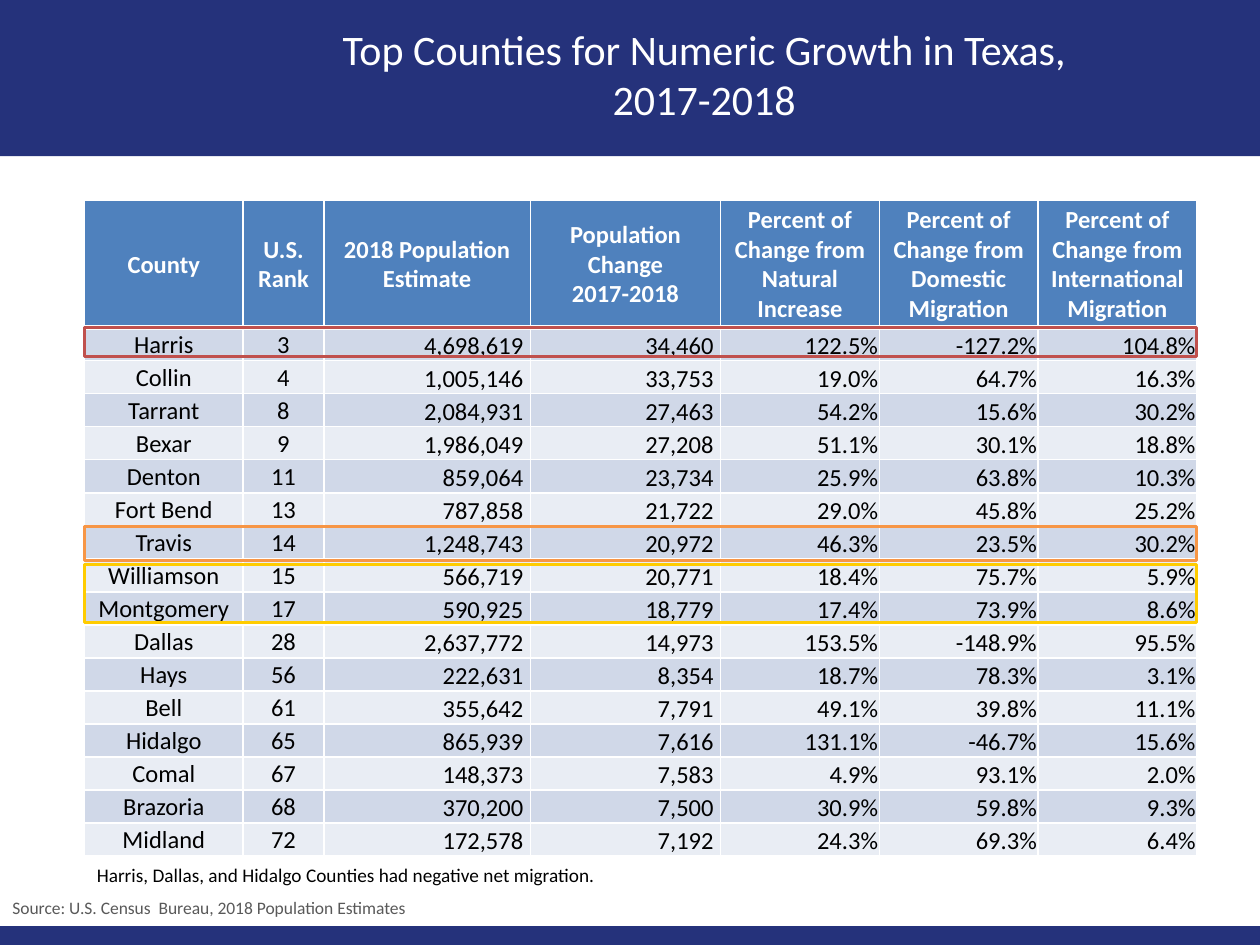
from lxml import etree
from pptx import Presentation
from pptx.dml.color import RGBColor
from pptx.enum.shapes import MSO_SHAPE
from pptx.enum.text import MSO_ANCHOR, PP_ALIGN
from pptx.oxml.ns import qn
from pptx.util import Pt

RECT = MSO_SHAPE.RECTANGLE
MID, LOW, TOP = MSO_ANCHOR.MIDDLE, MSO_ANCHOR.BOTTOM, MSO_ANCHOR.TOP
LEFT, MAIN, RIGHT = PP_ALIGN.LEFT, PP_ALIGN.CENTER, PP_ALIGN.RIGHT
FONT = "Calibri"
HUES = {
    "navy": "25327B", "head": "4F81BD", "odd": "D0D8E8", "even": "E9EDF4",
    "white": "FFFFFF", "black": "000000", "gray": "595959",
    "orange": "F79646", "red": "C0504D", "gold": "FFCC00",
}
WIDE, HIGH = 720, 540
COLS = [90.72, 46.08, 118.08, 108.72, 90.72, 90.72, 90.72]
HEAD_H, ROW_H = 72.72, 18.9
GRID = (48.24, 114.48, sum(COLS), 489.6 - 114.48)
HEADS = [
    "County", "U.S. Rank", "2018 Population Estimate",
    "Population Change\n2017-2018",
    "Percent of Change from Natural Increase",
    "Percent of Change from Domestic Migration",
    "Percent of Change from International Migration",
]
ROWS = [
    ("Harris", "3", "4,698,619", "34,460", "122.5%", "-127.2%", "104.8%"),
    ("Collin", "4", "1,005,146", "33,753", "19.0%", "64.7%", "16.3%"),
    ("Tarrant", "8", "2,084,931", "27,463", "54.2%", "15.6%", "30.2%"),
    ("Bexar", "9", "1,986,049", "27,208", "51.1%", "30.1%", "18.8%"),
    ("Denton", "11", "859,064", "23,734", "25.9%", "63.8%", "10.3%"),
    ("Fort Bend", "13", "787,858", "21,722", "29.0%", "45.8%", "25.2%"),
    ("Travis", "14", "1,248,743", "20,972", "46.3%", "23.5%", "30.2%"),
    ("Williamson", "15", "566,719", "20,771", "18.4%", "75.7%", "5.9%"),
    ("Montgomery", "17", "590,925", "18,779", "17.4%", "73.9%", "8.6%"),
    ("Dallas", "28", "2,637,772", "14,973", "153.5%", "-148.9%", "95.5%"),
    ("Hays", "56", "222,631", "8,354", "18.7%", "78.3%", "3.1%"),
    ("Bell", "61", "355,642", "7,791", "49.1%", "39.8%", "11.1%"),
    ("Hidalgo", "65", "865,939", "7,616", "131.1%", "-46.7%", "15.6%"),
    ("Comal", "67", "148,373", "7,583", "4.9%", "93.1%", "2.0%"),
    ("Brazoria", "68", "370,200", "7,500", "30.9%", "59.8%", "9.3%"),
    ("Midland", "72", "172,578", "7,192", "24.3%", "69.3%", "6.4%"),
]


def tint(name):
    return RGBColor.from_string(HUES[name])


def place(shape, box):
    shape.left, shape.top, shape.width, shape.height = map(Pt, box)


def write(frame, text, size, hue, align, bold=False, space=1.0):
    for i, line in enumerate(text.split("\n")):
        para = frame.add_paragraph() if i else frame.paragraphs[0]
        para.alignment = align
        para.line_spacing = space
        run = para.add_run()
        run.text = line
        run.font.name, run.font.size, run.font.bold = FONT, Pt(size), bold
        run.font.color.rgb = tint(hue)


def add_band(slide, box):
    band = slide.shapes.add_shape(RECT, *map(Pt, box))
    band.shadow.inherit = False
    band.fill.solid()
    band.fill.fore_color.rgb = tint("navy")
    band.line.fill.background()


def add_title(slide, box, text):
    title = slide.shapes.title
    place(title, box)
    slide.shapes._spTree.append(title._element)
    frame = title.text_frame
    frame.word_wrap = True
    frame.vertical_anchor = MID
    write(frame, text, 24, "white", MAIN)


def add_note(slide, box, text, size, hue, space=1.0):
    frame = slide.shapes.add_textbox(*map(Pt, box)).text_frame
    frame.word_wrap = True
    frame.vertical_anchor = TOP
    write(frame, text, size, hue, LEFT, space=space)


def add_frame(slide, box, hue):
    ring = slide.shapes.add_shape(RECT, *map(Pt, box))
    ring.shadow.inherit = False
    ring.fill.background()
    ring.line.color.rgb = tint(hue)
    ring.line.width = Pt(1.75)


def edge(cell, low):
    props = cell._tc.get_or_add_tcPr()
    for tag, size in (("lnL", 1), ("lnR", 1), ("lnT", 1), ("lnB", low)):
        line = etree.SubElement(props, qn("a:" + tag), w=str(Pt(size)))
        fill = etree.SubElement(line, qn("a:solidFill"))
        etree.SubElement(fill, qn("a:srgbClr"), val=HUES["white"])


def fill_cell(cell, text, row, col):
    head = row == 0
    mid = head or col < 2
    edge(cell, 3 if head else 1)
    cell.fill.solid()
    cell.fill.fore_color.rgb = tint("head" if head else "odd" if row % 2 else "even")
    cell.margin_left = cell.margin_top = Pt(0.72)
    cell.margin_right = Pt(4 if not head and col in (2, 3) else 0.72)
    cell.margin_bottom = 0
    cell.vertical_anchor = MID if mid else LOW
    write(cell.text_frame, text, 14, "white" if head else "black",
          MAIN if mid else RIGHT, head)


def add_grid(slide, box):
    data = [HEADS, *ROWS]
    table = slide.shapes.add_table(len(data), len(COLS), *map(Pt, box)).table
    table.horz_banding = False
    for col, width in zip(table.columns, COLS):
        col.width = Pt(width)
    for r, line in enumerate(data):
        table.rows[r].height = Pt(ROW_H if r else HEAD_H)
        for c, text in enumerate(line):
            fill_cell(table.cell(r, c), text, r, c)


def main():
    deck = Presentation()
    deck.slide_width, deck.slide_height = Pt(WIDE), Pt(HIGH)
    slide = deck.slides.add_slide(deck.slide_layouts[5])
    add_band(slide, (0, 0, WIDE, 89.28))
    add_band(slide, (0, 529.2, WIDE, 10.8))
    add_grid(slide, GRID)
    add_title(slide, (185.76, 9.36, 433.44, 65.52),
              "Top Counties for Numeric Growth in Texas, 2017-2018")
    left, wide = GRID[0], GRID[2]
    add_note(slide, (left, 489.6, 491.76, 20.88),
             "Harris, Dallas, and Hidalgo Counties had negative net migration.",
             11, "black")
    add_note(slide, (0, 508.32, 360, 20.16),
             "Source: U.S. Census  Bureau, 2018 Population Estimates",
             10, "gray", 1.07)
    for top, high, hue in ((300.96, 19.44, "orange"), (187.2, 16.56, "red"),
                           (322.56, 33.12, "gold")):
        add_frame(slide, (left, top, wide, high), hue)
    deck.save("out.pptx")


if __name__ == "__main__":
    main()
